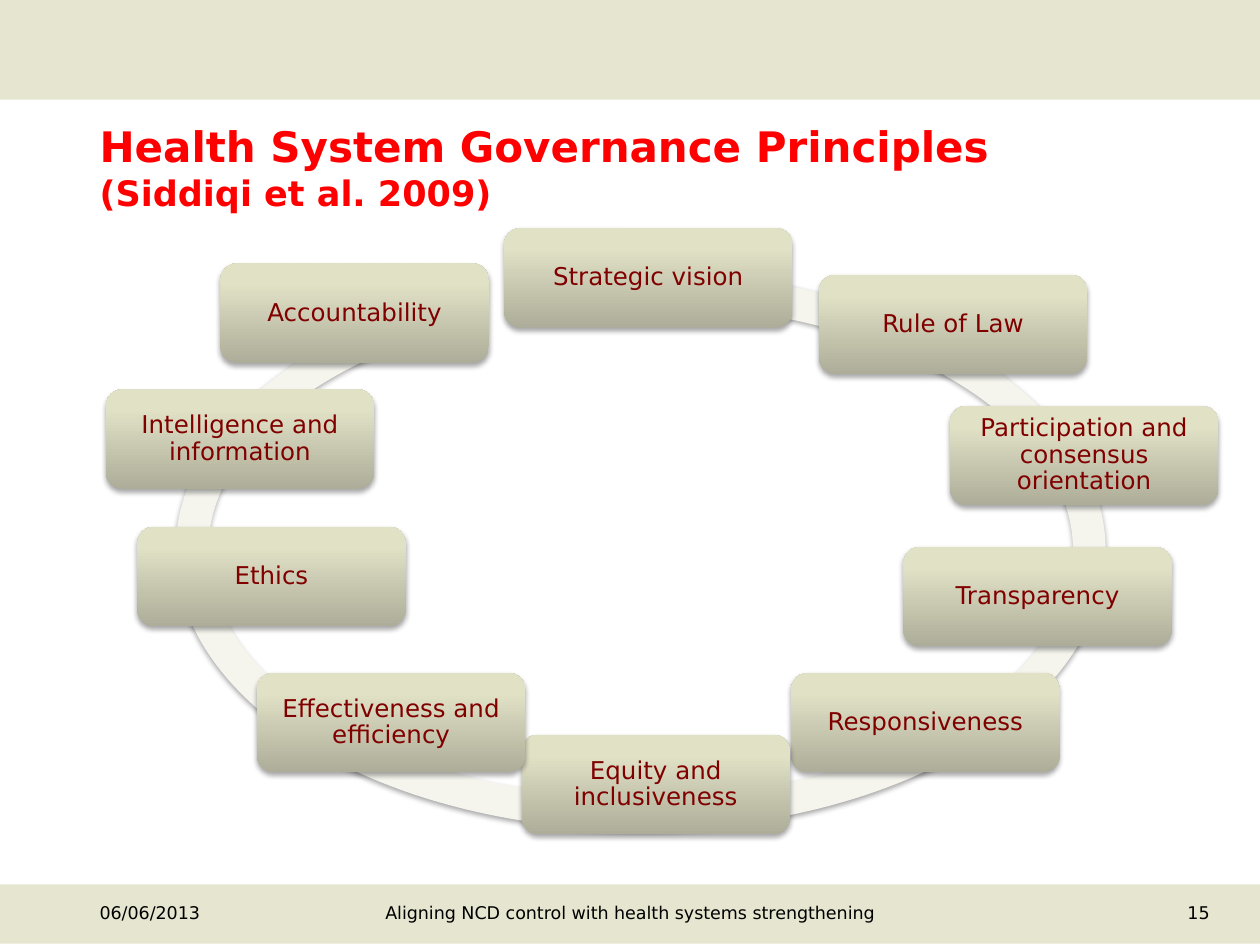
import pptx
import pptx.util
import pptx.dml.color
import pptx.enum.shapes
import pptx.enum.text
import pptx.oxml
import pptx.oxml.ns

Inches = pptx.util.Inches
SHAPE = pptx.enum.shapes.MSO_SHAPE
ALIGN = pptx.enum.text.PP_ALIGN
ANCHOR = pptx.enum.text.MSO_ANCHOR

FONT = "DejaVu Sans"
COLORS = {"band": "E5E5D0", "title": "FF0000", "footer": "000000",
          "ring": "F5F5EE", "principle": "800000", "shadow": "000000"}
GRADIENT = [(0, "ADAD99"), (80, "E1E1C6"), (100, "E2E2C7")]
BANDS = [(0, 7.02, 10, 0.47), (0, 0, 10, 0.79)]
TITLE = [("Health System Governance Principles", 24), ("(Siddiqi et al. 2009)", 20)]
FOOTER = [
    ("06/06/2013", 0.79, 1.65, ALIGN.LEFT),
    ("Aligning NCD control with health systems strengthening", 2.56, 4.88, ALIGN.CENTER),
    ("15", 7.95, 1.65, ALIGN.RIGHT),
]
RING = (1.25, 2.01, 7.67, 4.72)
RING_ADJUSTMENTS = (0.055, 3.307, 136.949, 174.355, 0.058)
BOX_WIDTH, BOX_HEIGHT = 2.13, 0.79
VISION_WIDTH = 2.29
PRINCIPLES = [
    ("Strategic vision", 4, 1.81),
    ("Rule of Law", 6.5, 2.18),
    ("Participation and consensus orientation", 7.54, 3.22),
    ("Transparency", 7.17, 4.34),
    ("Responsiveness", 6.28, 5.34),
    ("Equity and inclusiveness", 4.14, 5.83),
    ("Effectiveness and efficiency", 2.04, 5.34),
    ("Ethics", 1.09, 4.18),
    ("Intelligence and information", 0.84, 3.09),
    ("Accountability", 1.75, 2.09),
]


def rgb(name):
    return pptx.dml.color.RGBColor.from_string(COLORS[name])


def add_shape(slide, preset, place, fill=None):
    shape = slide.shapes.add_shape(preset, *map(Inches, place))
    shape.shadow.inherit = False
    if fill:
        shape.fill.solid()
        shape.fill.fore_color.rgb = rgb(fill)
    shape.line.fill.background()
    return shape


def add_shadow(shape):
    effects = shape.element.spPr.find(pptx.oxml.ns.qn("a:effectLst"))
    effects.append(pptx.oxml.parse_xml(
        f'<a:outerShdw {pptx.oxml.ns.nsdecls("a")} blurRad="39370" dist="22860" '
        f'dir="5400000" rotWithShape="0"><a:srgbClr val="{COLORS["shadow"]}">'
        '<a:alpha val="35000"/></a:srgbClr></a:outerShdw>'))


def add_gradient(shape):
    shape.fill.gradient()
    shape.fill.gradient_angle = 90
    stops = shape.element.spPr.find(".//" + pptx.oxml.ns.qn("a:gsLst"))
    for stop in list(stops):
        stops.remove(stop)
    for position, color in GRADIENT:
        stops.append(pptx.oxml.parse_xml(
            f'<a:gs {pptx.oxml.ns.nsdecls("a")} pos="{position * 1000}">'
            f'<a:srgbClr val="{color}"/></a:gs>'))


def set_text(shape, text, sizes, color, insets, align, anchor, bold=False):
    frame = shape.text_frame
    frame.word_wrap = True
    frame.vertical_anchor = anchor
    frame.margin_left, frame.margin_top, frame.margin_right, frame.margin_bottom = map(Inches, insets)
    paragraph = frame.paragraphs[0]
    paragraph.text = text
    paragraph.alignment = align
    for run, size in zip(paragraph.runs, sizes):
        run.font.name = FONT
        run.font.size = pptx.util.Pt(size)
        run.font.bold = bold
        run.font.color.rgb = rgb(color)
    return paragraph


def main():
    deck = pptx.Presentation()
    deck.slide_width, deck.slide_height = Inches(10), Inches(7.5)
    slide = deck.slides.add_slide(deck.slide_layouts[6])

    for band in BANDS:
        add_shape(slide, SHAPE.RECTANGLE, band, "band")

    for text, left, width, align in FOOTER:
        footer = slide.shapes.add_textbox(*map(Inches, (left, 7.16, width, 0.25)))
        set_text(footer, text, [10], "footer", (0, 0, 0, 0), align, ANCHOR.TOP)

    title = slide.shapes.add_textbox(*map(Inches, (0.79, 1.19, 8.82, 0.55)))
    lines, sizes = zip(*TITLE)
    set_text(title, "\v".join(lines), sizes, "title", (0, 0.05, 0.1, 0.05),
             ALIGN.LEFT, ANCHOR.BOTTOM, bold=True)

    ring = add_shape(slide, SHAPE.CIRCULAR_ARROW, RING, "ring")
    for index, value in enumerate(RING_ADJUSTMENTS):
        ring.adjustments[index] = value
    add_shadow(ring)

    for index, (name, left, top) in enumerate(PRINCIPLES):
        width = BOX_WIDTH if index else VISION_WIDTH
        box = add_shape(slide, SHAPE.ROUNDED_RECTANGLE, (left, top, width, BOX_HEIGHT))
        add_gradient(box)
        add_shadow(box)
        paragraph = set_text(box, name, [14], "principle", (0.1, 0.1, 0.1, 0.1),
                             ALIGN.CENTER, ANCHOR.MIDDLE)
        paragraph.line_spacing = 0.9

    deck.save("out.pptx")


if __name__ == "__main__":
    main()
